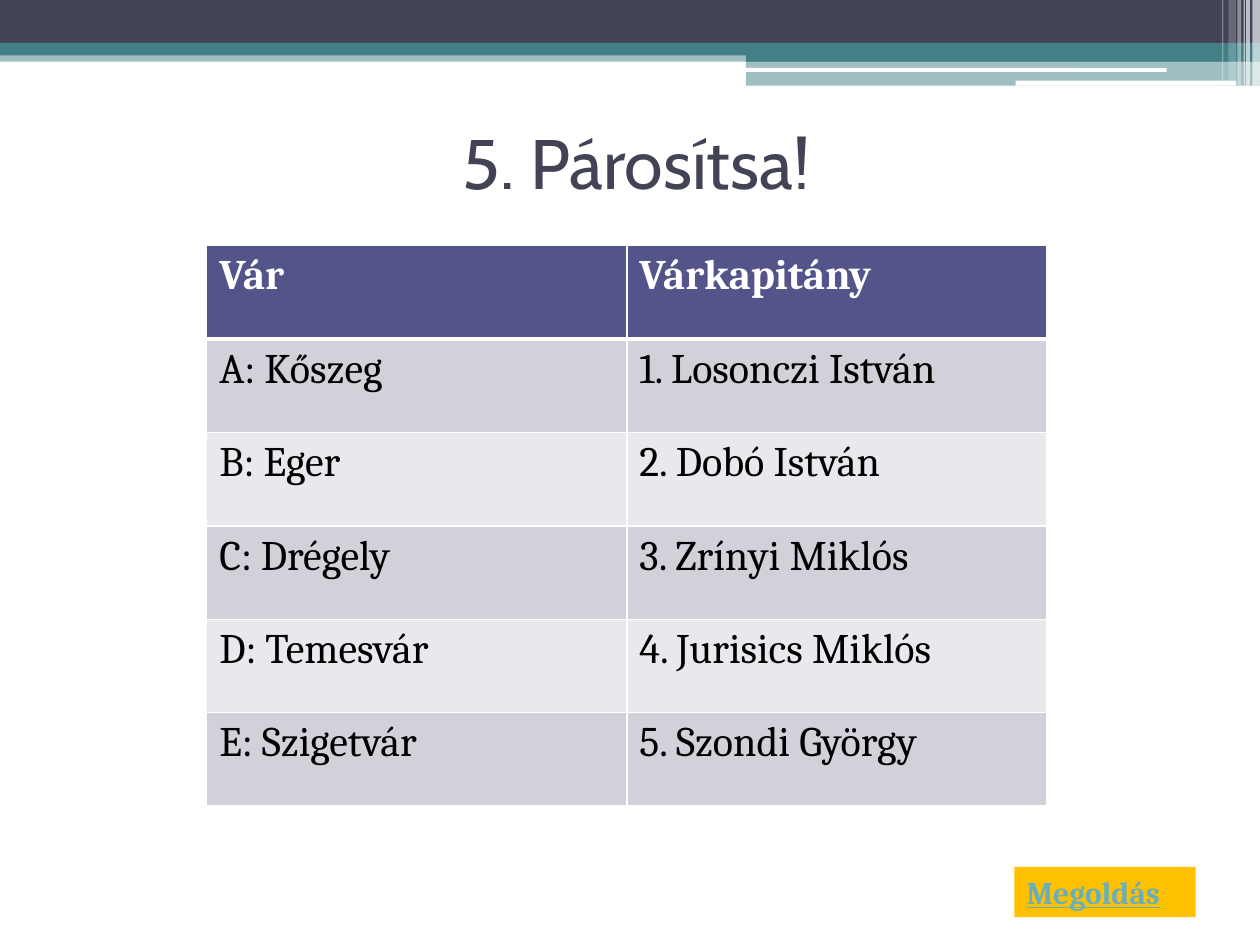
from dataclasses import dataclass
from typing import NamedTuple

from lxml import etree
from pptx import Presentation
from pptx.dml.color import RGBColor
from pptx.enum.shapes import MSO_SHAPE
from pptx.enum.text import MSO_ANCHOR, PP_ALIGN
from pptx.oxml import parse_xml
from pptx.oxml.ns import nsdecls, qn
from pptx.util import Inches, Pt

RECT, ROUND = MSO_SHAPE.RECTANGLE, MSO_SHAPE.ROUNDED_RECTANGLE
MIDDLE, TOP = MSO_ANCHOR.MIDDLE, MSO_ANCHOR.TOP
CENTER, LEFT = PP_ALIGN.CENTER, PP_ALIGN.LEFT
COLS, ROWS = 100, 75  # square grid over the slide


@dataclass(frozen=True)
class Theme:
    dark: str = "424456"
    teal: str = "438086"
    white: str = "FFFFFF"
    black: str = "000000"
    head: str = "53548A"
    bands: tuple[str, str] = ("D1D1DA", "E9E9ED")
    gold: str = "FFC000"
    link: str = "67AFBD"
    title_font: str = "Cabin"
    body_font: str = "Cambria"
    title_size: int = 40
    cell_size: int = 24
    link_size: int = 18
    thin: int = 1
    thick: int = 3


class Box(NamedTuple):
    x: float
    y: float
    w: float
    h: float


class Bar(NamedTuple):
    box: Box
    color: str
    alpha: int = 100
    form: int = RECT


class Style(NamedTuple):
    font: str
    size: int
    color: str
    bold: bool = False
    under: bool = False
    align: int = LEFT


THEME = Theme()
BANDS = [
    Bar(Box(0, 4, COLS, 0.9), THEME.teal, 50),
    Bar(Box(0, 0, COLS, 3.4), THEME.dark),
    Bar(Box(0, 3.4, COLS, 1), THEME.teal),
    Bar(Box(59.2, 3.9, 40.8, 1), THEME.teal),
    Bar(Box(59.2, 4.8, 40.8, 2), THEME.teal, 50),
    Bar(Box(59.1, 5.4, 33.5, 0.3), THEME.white, form=ROUND),
    Bar(Box(80.6, 6.4, 17.5, 0.4), THEME.white, form=ROUND),
]
# left, width, height, opacity of each upright stripe
STRIPES = [
    (99.4, 0.6, 6.8, 65), (98.9, 0.3, 6.8, 65), (98.7, 0.1, 6.8, 60),
    (98.2, 0.3, 6.8, 40), (97.5, 0.6, 6.4, 20), (97, 0.1, 6.4, 30),
]
BARS = BANDS + [Bar(Box(x, 0, w, h), THEME.white, a) for x, w, h, a in STRIPES]
PAIRS = [
    ("Vár", "Várkapitány"),
    ("A: Kőszeg", "1. Losonczi István"),
    ("B: Eger", "2. Dobó István"),
    ("C: Drégely", "3. Zrínyi Miklós"),
    ("D: Temesvár", "4. Jurisics Miklós"),
    ("E: Szigetvár", "5. Szondi György"),
]


def place(prs, box: Box) -> list[int]:
    """Turn grid units into slide lengths."""
    col, row = prs.slide_width / COLS, prs.slide_height / ROWS
    return [round(n * u) for n, u in zip(box, (col, row, col, row))]


def paint(fill, color: str, alpha: int = 100) -> None:
    fill.solid()
    fill.fore_color.rgb = RGBColor.from_string(color)
    if alpha < 100:
        tint = fill.fore_color._xFill.find(qn("a:srgbClr"))
        etree.SubElement(tint, qn("a:alpha"), val=str(alpha * 1000))


def write(frame, text: str, style: Style) -> None:
    frame.text = text
    line = frame.paragraphs[0]
    line.alignment = style.align
    font = line.font
    font.name, font.size = style.font, Pt(style.size)
    font.bold, font.underline = style.bold, style.under
    font.color.rgb = RGBColor.from_string(style.color)


def draw_bar(prs, slide, bar: Bar) -> None:
    shape = slide.shapes.add_shape(bar.form, *place(prs, bar.box))
    shape.shadow.inherit = False
    shape.line.fill.background()
    paint(shape.fill, bar.color, bar.alpha)


def draw_text(prs, slide, box: Box, text: str, style: Style,
              wrap: bool = True, anchor: int = TOP):
    shape = slide.shapes.add_textbox(*place(prs, box))
    frame = shape.text_frame
    frame.word_wrap, frame.vertical_anchor = wrap, anchor
    write(frame, text, style)
    return shape


def edge(cell, side: str, width: int) -> None:
    """Add one border; call in the order L, R, T, B, before the fill."""
    cell._tc.get_or_add_tcPr().append(parse_xml(
        f'<a:ln{side} {nsdecls("a")} w="{Pt(width)}"><a:solidFill>'
        f'<a:srgbClr val="{THEME.white}"/></a:solidFill></a:ln{side}>'))


def draw_table(prs, slide, box: Box, rows: list[tuple[str, str]]) -> None:
    table = slide.shapes.add_table(
        len(rows), len(rows[0]), *place(prs, box)).table
    for r, row in enumerate(rows):
        head = r == 0
        fill = THEME.head if head else THEME.bands[(r - 1) % 2]
        ink = THEME.white if head else THEME.black
        sides = {
            "L": THEME.thin,
            "R": THEME.thin,
            "T": THEME.thick if r == 1 else THEME.thin,
            "B": THEME.thick if head else THEME.thin,
        }
        for c, text in enumerate(row):
            cell = table.cell(r, c)
            for side, width in sides.items():
                edge(cell, side, width)
            paint(cell.fill, fill)
            write(cell.text_frame, text,
                  Style(THEME.body_font, THEME.cell_size, ink, bold=head))


def main() -> None:
    prs = Presentation()
    prs.slide_width, prs.slide_height = Inches(10), Inches(7.5)
    slide = prs.slides.add_slide(prs.slide_layouts[6])
    for bar in BARS:
        draw_bar(prs, slide, bar)
    draw_text(prs, slide, Box(5.5, 7, 90, 11.7), "5. Párosítsa!",
              Style(THEME.title_font, THEME.title_size, THEME.dark,
                    align=CENTER), anchor=MIDDLE)
    link = draw_text(prs, slide, Box(80.5, 68.8, 14.4, 4), "Megoldás",
                     Style(THEME.body_font, THEME.link_size, THEME.link,
                           bold=True, under=True))
    paint(link.fill, THEME.gold)
    draw_table(prs, slide, Box(16.4, 19.5, 66.7, 44.5), PAIRS)
    prs.save("out.pptx")


if __name__ == "__main__":
    main()
